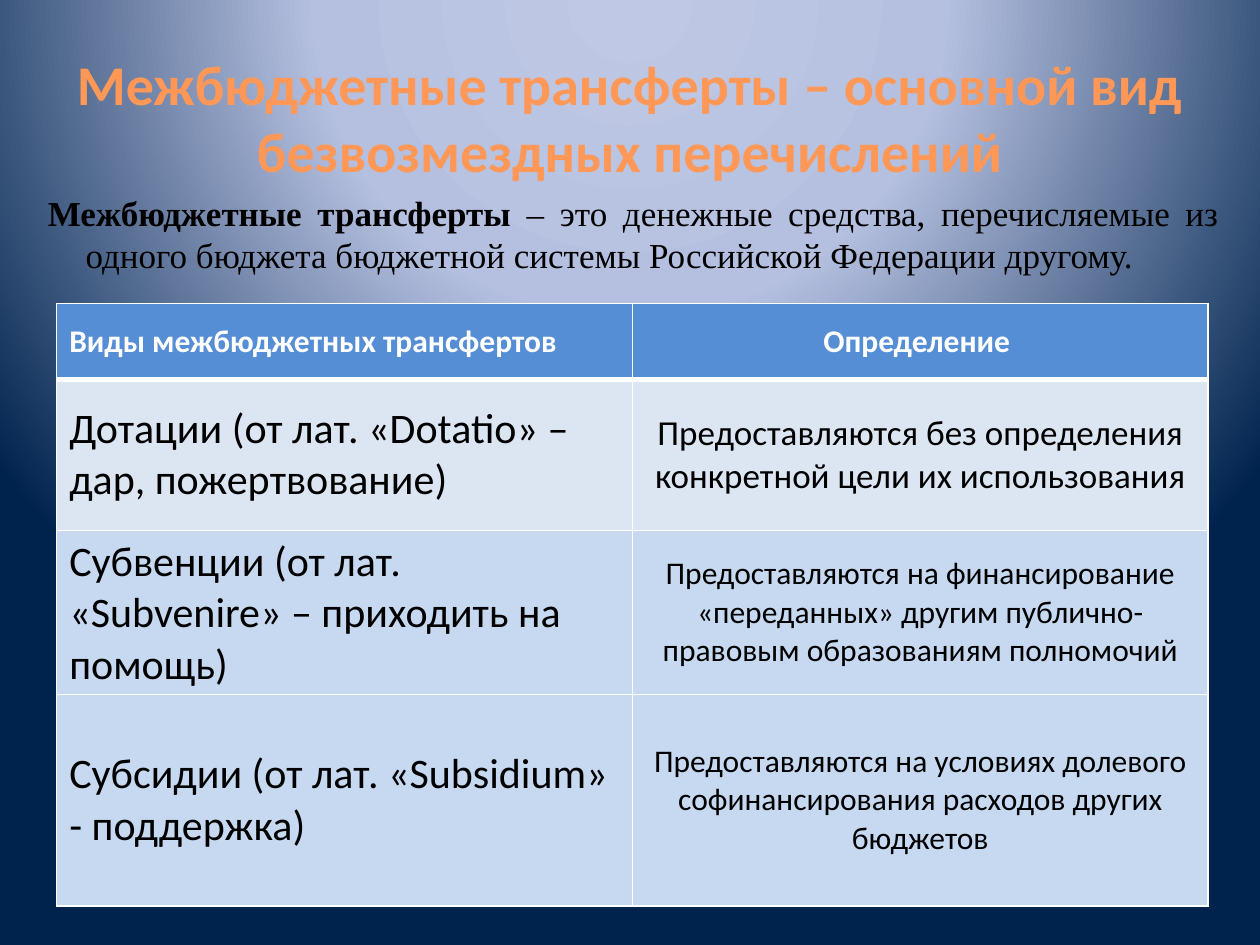
from lxml import etree
from pptx import Presentation
from pptx.dml.color import RGBColor
from pptx.enum.text import MSO_ANCHOR, MSO_AUTO_SIZE, PP_ALIGN
from pptx.oxml.ns import qn
from pptx.util import Pt

LEFT, CENTER, JUSTIFY = PP_ALIGN.LEFT, PP_ALIGN.CENTER, PP_ALIGN.JUSTIFY
MIDDLE = MSO_ANCHOR.MIDDLE
GROW = MSO_AUTO_SIZE.SHAPE_TO_FIT_TEXT

COLORS = {
    "white": "FFFFFF",
    "black": "000000",
    "header": "558ED5",
    "light row": "DCE6F2",
    "blue row": "C6D9F1",
    "sky": "BFC9E5",
    "haze": "B5C0E0",
    "navy": "00234D",
    "brown": "9D4700",
    "orange": "FF9856",
    "cream": "FFF5F1",
}
HEADINGS = ("Виды межбюджетных трансфертов", "Определение ")
# Transfer kind, definition, definition size, row height, row colour
TRANSFERS = [
    ("Дотации (от лат. «Dotatio» – дар, пожертвование)",
     "Предоставляются без определения конкретной цели их использования",
     20, 86.4, "light row"),
    ("Субвенции (от лат. «Subvenire» – приходить на помощь)",
     "Предоставляются на финансирование «переданных» другим "
     "публично-правовым образованиям полномочий",
     18, 90.7, "blue row"),
    ("Субсидии (от лат. «Subsidium» - поддержка)",
     "Предоставляются на условиях долевого софинансирования расходов других бюджетов",
     18, 121, "blue row"),
]


def rgb(name):
    return RGBColor.from_string(COLORS[name])


def add_child(parent, tag, **attributes):
    child = etree.SubElement(parent, qn(tag))
    for key, value in attributes.items():
        child.set(key, str(value))
    return child


def set_gradient(fill, owner, stops):
    """Give the fill its stops and return its empty gradient element."""
    fill.gradient()
    gradient = owner.find(".//" + qn("a:gradFill"))
    for child in list(gradient):
        gradient.remove(child)
    stop_list = add_child(gradient, "a:gsLst")
    for percent, name in stops:
        stop = add_child(stop_list, "a:gs", pos=percent * 1000)
        add_child(stop, "a:srgbClr", val=COLORS[name])
    return gradient


def set_background(slide):
    stops = [(0, "sky"), (40, "haze"), (100, "navy")]
    gradient = set_gradient(slide.background.fill, slide.element, stops)
    circle = add_child(gradient, "a:path", path="circle")
    add_child(circle, "a:fillToRect", l=50000, t=-80000, r=50000, b=180000)


def style_font(font, name, size, color=None, bold=False):
    font.name, font.size, font.bold = name, Pt(size), bold
    if color:
        font.color.rgb = rgb(color)


def add_text_box(slide, left, top, width, height):
    shape = slide.shapes.add_textbox(Pt(left), Pt(top), Pt(width), Pt(height))
    shape.text_frame.word_wrap = True
    return shape


def add_title(slide):
    shape = add_text_box(slide, 36, 21.6, 648, 90)
    shape.text_frame.vertical_anchor = MIDDLE
    paragraph = shape.text_frame.paragraphs[0]
    paragraph.alignment = CENTER
    run = paragraph.add_run()
    run.text = "Межбюджетные трансферты – основной вид безвозмездных перечислений"
    style_font(run.font, "Calibri", 32, bold=True)
    stops = [(0, "brown"), (78, "orange"), (100, "cream")]
    gradient = set_gradient(run.font.fill, shape.element, stops)
    add_child(gradient, "a:lin", ang=90 * 60000, scaled=0)


def add_explanation(slide):
    shape = add_text_box(slide, 20.2, 105.8, 683.3, 55.4)
    shape.text_frame.auto_size = GROW
    paragraph = shape.text_frame.paragraphs[0]
    paragraph.alignment = JUSTIFY
    paragraph.space_before = Pt(5.8)
    properties = paragraph._p.get_or_add_pPr()
    properties.set("marL", str(Pt(21.6)))
    properties.set("indent", str(-Pt(21.6)))
    for text, bold in (
        ("Межбюджетные трансферты ", True),
        ("– это денежные средства, перечисляемые из одного бюджета "
         "бюджетной системы Российской Федерации другому.", False),
    ):
        run = paragraph.add_run()
        run.text = text
        style_font(run.font, "Times New Roman", 20, "black", bold)


def set_borders(cell, bottom):
    properties = cell._tc.get_or_add_tcPr()
    widths = (("a:lnL", 1), ("a:lnR", 1), ("a:lnT", 1), ("a:lnB", bottom))
    for index, (tag, width) in enumerate(widths):
        line = add_child(properties, tag, w=Pt(width))
        add_child(add_child(line, "a:solidFill"), "a:srgbClr", val=COLORS["white"])
        properties.insert(index, line)  # borders come before the fill


def fill_cell(cell, text, size, alignment, fill, color="black", bold=False, bottom=1):
    cell.vertical_anchor = MIDDLE
    cell.fill.solid()
    cell.fill.fore_color.rgb = rgb(fill)
    set_borders(cell, bottom)
    cell.text = text
    paragraph = cell.text_frame.paragraphs[0]
    paragraph.alignment = alignment
    style_font(paragraph.font, "Calibri", size, color, bold)


def add_transfer_table(slide):
    heights = [43.2] + [transfer[3] for transfer in TRANSFERS]
    table = slide.shapes.add_table(
        len(heights), 2, Pt(32.4), Pt(173.5), Pt(658), Pt(sum(heights))).table
    for row, height in zip(table.rows, heights):
        row.height = Pt(height)
    # Heading row
    for column, (heading, alignment) in enumerate(zip(HEADINGS, (LEFT, CENTER))):
        fill_cell(table.cell(0, column), heading, 18, alignment, "header",
                  "white", bold=True, bottom=3)
    # One row for each kind of transfer
    for row, (kind, definition, size, _, fill) in enumerate(TRANSFERS, 1):
        fill_cell(table.cell(row, 0), kind, 24, LEFT, fill)
        fill_cell(table.cell(row, 1), definition, size, CENTER, fill)


def main():
    presentation = Presentation()
    presentation.slide_width, presentation.slide_height = Pt(720), Pt(540)
    slide = presentation.slides.add_slide(presentation.slide_layouts[6])
    set_background(slide)
    add_title(slide)
    add_explanation(slide)
    add_transfer_table(slide)
    presentation.save("out.pptx")


if __name__ == "__main__":
    main()
